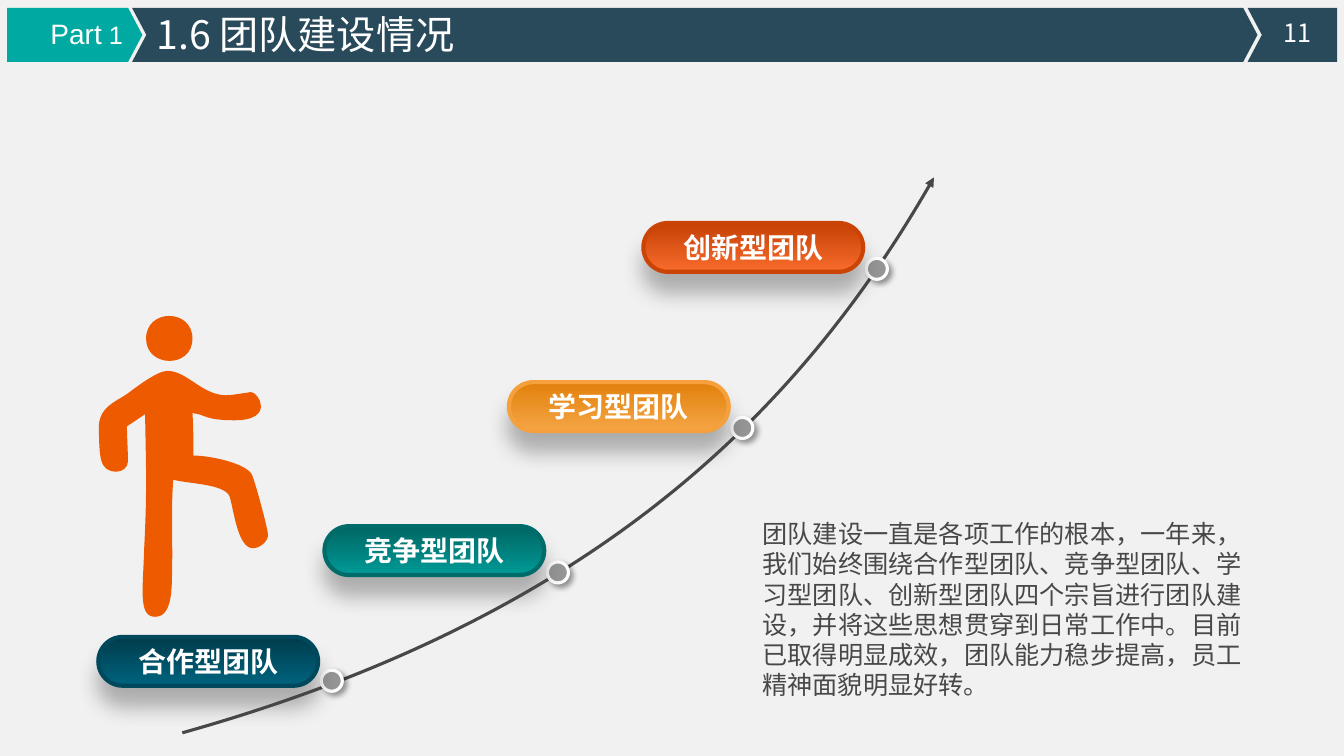
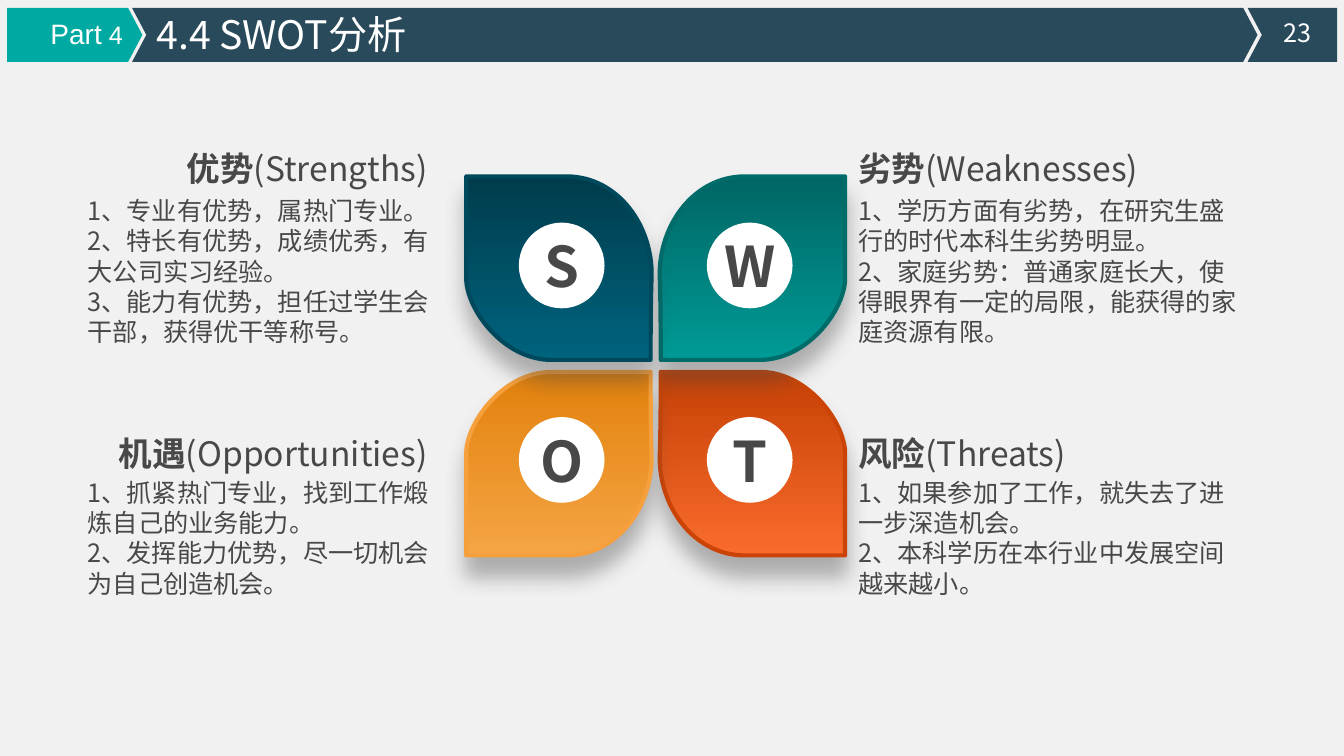
from lxml import etree
from pptx import Presentation
from pptx.dml.color import RGBColor
from pptx.enum.shapes import MSO_SHAPE
from pptx.enum.text import MSO_ANCHOR, MSO_AUTO_SIZE, PP_ALIGN
from pptx.oxml.ns import qn
from pptx.util import Cm, Pt

LEFT, CENTER, RIGHT, JUSTIFY = PP_ALIGN.LEFT, PP_ALIGN.CENTER, PP_ALIGN.RIGHT, PP_ALIGN.JUSTIFY
MIDDLE = MSO_ANCHOR.MIDDLE
OVAL, PILL = MSO_SHAPE.OVAL, MSO_SHAPE.ROUNDED_RECTANGLE

FONT = "Noto Sans CJK SC"
WHITE = RGBColor(0xFF, 0xFF, 0xFF)
PAPER = RGBColor(0xF1, 0xF1, 0xF1)
INK = RGBColor(0x48, 0x48, 0x49)
GRAY = RGBColor(0x96, 0x96, 0x96)
BLACK = RGBColor(0, 0, 0)
TEAL_BAND = RGBColor(0x00, 0xAA, 0xA2)
NAVY_BAND = RGBColor(0x29, 0x4A, 0x5A)
WALKER_ORANGE = RGBColor(0xED, 0x5A, 0x00)
# Each theme colour: gradient top, gradient bottom, border
BLUE = (RGBColor(0x00, 0x3C, 0x4C), RGBColor(0x00, 0x63, 0x7E), RGBColor(0x00, 0x48, 0x5C))
TEAL = (RGBColor(0x00, 0x66, 0x64), RGBColor(0x00, 0x9A, 0x96), RGBColor(0x00, 0x6C, 0x6A))
AMBER = (RGBColor(0xE2, 0x81, 0x0C), RGBColor(0xF5, 0xA5, 0x45), RGBColor(0xF5, 0xA0, 0x3C))
RED = (RGBColor(0xC6, 0x41, 0x06), RGBColor(0xF8, 0x6B, 0x2C), RGBColor(0xCB, 0x44, 0x06))

UNIT = Cm(0.0254)  # grid step of the curved outlines


def write(tf, lines, size, color, align=LEFT, bold=False, font=FONT, wrap=True):
    """Fill a text frame; each line is a list of run texts."""
    tf.word_wrap = wrap
    tf.auto_size = MSO_AUTO_SIZE.NONE
    for i, texts in enumerate(lines):
        p = tf.add_paragraph() if i else tf.paragraphs[0]
        p.alignment = align
        p.line_spacing = Pt(size * 1.2)
        for text in texts:
            r = p.add_run()
            r.text = text
            r.font.name, r.font.size, r.font.bold = font, Pt(size), bold
            r.font.color.rgb = color
            etree.SubElement(r.font._element, qn("a:ea"), typeface=font)


def trace(shapes, x, y, contours, sx=1, sy=1, close=True):
    """Draw contours of cubic curves, given on the UNIT grid, as one shape at x, y."""
    builder = None
    for contour in contours:
        points = [(x + sx * px * UNIT, y + sy * py * UNIT) for px, py in contour]
        if builder:
            builder.move_to(*points[0])
        else:
            builder = shapes.build_freeform(*points[0])
        builder.add_line_segments(points[1:], close=close)
    shape = builder.convert_to_shape()
    shape.shadow.inherit = False
    # Every three segments become one curve: two handles and an end point
    segments = list(shape.element.spPr.iter(qn("a:lnTo")))
    for i in range(0, len(segments), 3):
        curve = etree.Element(qn("a:cubicBezTo"))
        segments[i].addprevious(curve)
        for segment in segments[i:i + 3]:
            curve.append(segment[0])
            segment.getparent().remove(segment)
    return shape


prs = Presentation()
prs.slide_width, prs.slide_height = Cm(33.88), Cm(19.05)

# Layout: background and title place
layout = prs.slide_layouts[5]
layout.background.fill.solid()
layout.background.fill.fore_color.rgb = PAPER
for ph in list(layout.placeholders):
    if ph.placeholder_format.idx:
        ph.element.getparent().remove(ph.element)
    else:
        ph.left, ph.top, ph.width, ph.height = Cm(3.69), Cm(0.13), Cm(14), Cm(1.45)
        ph.text_frame.vertical_anchor = MIDDLE

# Slides with title, part label and page number
slides = []
for title, part, number in [("1.6 团队建设情况", "1", "11"), ("4.4 SWOT分析", "4", "23")]:
    s = prs.slides.add_slide(layout)
    write(s.shapes.title.text_frame, [[title]], 28, WHITE)
    tf = s.shapes.add_textbox(Cm(0.4), Cm(0.3), Cm(2.95), Cm(1.12)).text_frame
    write(tf, [["Part", " " + part]], 20, WHITE, RIGHT, font="Arial")
    tf.paragraphs[0].runs[1].font.size = Pt(18)
    tf = s.shapes.add_textbox(Cm(32.03), Cm(0.31), Cm(1.37), Cm(1.02)).text_frame
    write(tf, [[number]], 18, WHITE, CENTER, wrap=False)
    slides.append(s)
team, swot = slides

# Header bands, moved to the layout so that both slides share them
bands = []
for left, right, notch, tip, color in [(0.18, 3.23, 0, 0.36, TEAL_BAND),
                                       (3.33, 31.34, 0.36, 0.36, NAVY_BAND),
                                       (31.45, 33.71, 0.36, 0, NAVY_BAND)]:
    builder = team.shapes.build_freeform(Cm(left), Cm(0.2))
    builder.add_line_segments([(Cm(px), Cm(py)) for px, py in [
        (right, 0.2), (right + tip, 0.88), (right, 1.56), (left, 1.56), (left + notch, 0.88)]])
    band = builder.convert_to_shape()
    band.shadow.inherit = False
    band.fill.solid()
    band.fill.fore_color.rgb = color
    band.line.fill.background()
    bands.append(band)
for band in bands:
    layout.shapes.element.append(band.element)

raised = []    # shapes with a gradient, a border and a deep shadow
shadowed = []  # shape, shadow colour, blur, distance, direction

# Team: walking figure, body and head
walker = trace(team.shapes, 0, 0, [
    [(98, 425), (99, 453), (98, 468), (116, 468), (121, 468), (127, 464), (127, 458),
     (127, 446), (126, 434), (126, 423), (132, 419), (138, 415), (144, 411),
     (145, 467), (146, 488), (143, 546), (142, 585), (137, 612), (154, 612),
     (174, 612), (170, 574), (171, 553), (171, 528), (170, 500), (172, 476),
     (186, 480), (224, 480), (228, 493), (232, 506), (236, 544), (251, 544),
     (258, 544), (266, 537), (266, 531), (266, 525), (253, 477), (250, 471),
     (245, 460), (209, 452), (192, 452), (192, 438), (192, 424), (191, 410),
     (204, 411), (202, 417), (233, 417), (273, 417), (257, 389), (249, 389),
     (243, 390), (236, 391), (229, 392), (202, 395), (187, 368), (166, 368),
     (156, 368), (134, 385), (126, 391), (114, 399), (98, 404), (98, 425)],
    [(145, 336), (145, 365), (191, 366), (191, 336), (191, 306), (145, 306), (145, 336)]])
walker.fill.solid()
walker.fill.fore_color.rgb = WALKER_ORANGE
walker.line.fill.background()

# Team: growth arrow
arrow = trace(team.shapes, 0, 0, [[(181, 727), (577, 616), (790, 417), (927, 176)]], close=False)
arrow.fill.background()
arrow.line.color.rgb = INK
arrow.line.width = Pt(2.25)
etree.SubElement(arrow.element.spPr.find(qn("a:ln")), qn("a:tailEnd"), type="triangle")

# Team: stages with their dots on the arrow
for name, x, y, dot_y, colors in [("合作型团队", 2.48, 16.05, 16.89, BLUE),
                                  ("竞争型团队", 8.18, 13.26, 14.16, TEAL),
                                  ("学习型团队", 12.83, 9.63, 10.52, AMBER),
                                  ("创新型团队", 16.22, 5.62, 6.51, RED)]:
    dot = team.shapes.add_shape(OVAL, Cm(x + 5.62), Cm(dot_y), Cm(0.53), Cm(0.53))
    dot.fill.solid()
    dot.fill.fore_color.rgb = GRAY
    dot.line.color.rgb = WHITE
    dot.line.width = Pt(2.25)
    shadowed.append((dot, BLACK, 4, 3, 45))
    pill = team.shapes.add_shape(PILL, Cm(x), Cm(y), Cm(5.54), Cm(1.23))
    pill.adjustments[0] = 0.5
    pill.text_frame.vertical_anchor = MIDDLE
    write(pill.text_frame, [[name]], 20, WHITE, CENTER, bold=True, wrap=False)
    raised.append((pill, colors))

# Team: summary
tf = team.shapes.add_textbox(Cm(18.97), Cm(12.94), Cm(12.58), Cm(4.88)).text_frame
write(tf, [["团队建设一直是各项工作的根本，一年来，我们始终围绕合作型团队、竞争型团队、"
            "学习型团队、创新型团队四个宗旨进行团队建设，并将这些思想贯穿到日常工作中。"
            "目前已取得明显成效，团队能力稳步提高，员工精神面貌明显好转。"]], 18, INK, JUSTIFY)

# SWOT: four mirrored petals with their letters
for letter, sx, sy, colors in [("T", 1, 1, RED), ("W", 1, -1, TEAL),
                               ("O", -1, 1, AMBER), ("S", -1, -1, BLUE)]:
    petal = trace(swot.shapes, Cm(16.53), Cm(9.22), [[
        (5, 6), (39, 6), (72, 6), (106, 6), (154, 8), (189, 59), (188, 88),
        (188, 121), (188, 155), (188, 188), (154, 188), (121, 188), (87, 188),
        (37, 187), (3, 139), (4, 89), (5, 61), (5, 34), (5, 6)]], sx, sy)
    raised.append((petal, colors))
    disc = swot.shapes.add_shape(OVAL, Cm(15.45 + sx * 2.37), Cm(8.06 + sy * 2.45),
                                 Cm(2.16), Cm(2.16))
    disc.shadow.inherit = False
    disc.fill.solid()
    disc.fill.fore_color.rgb = WHITE
    disc.line.fill.background()
    disc.text_frame.vertical_anchor = MIDDLE
    write(disc.text_frame, [[letter]], 40, INK, CENTER, bold=True, wrap=False)

# SWOT: headings and points
for name, english, x, y, body_y, width, align, points in [
    ("优势", "(Strengths)", 1.96, 3.61, 4.8, 9.53, RIGHT,
     ["1、专业有优势，属热门专业。", "2、特长有优势，成绩优秀，有大公司实习经验。",
      "3、能力有优势，担任过学生会干部，获得优干等称号。"]),
    ("劣势", "(Weaknesses)", 21.39, 3.61, 4.8, 10.16, LEFT,
     ["1、学历方面有劣势，在研究生盛行的时代本科生劣势明显。",
      "2、家庭劣势：普通家庭长大，使得眼界有一定的局限，能获得的家庭资源有限。"]),
    ("机遇", "(Opportunities)", 1.96, 10.79, 11.9, 9.53, RIGHT,
     ["1、抓紧热门专业，找到工作煅炼自己的业务能力。",
      "2、发挥能力优势，尽一切机会为自己创造机会。"]),
    ("风险", "(Threats)", 21.39, 10.79, 11.9, 10.16, LEFT,
     ["1、如果参加了工作，就失去了进一步深造机会。",
      "2、本科学历在本行业中发展空间越来越小。"]),
]:
    tf = swot.shapes.add_textbox(Cm(x), Cm(y), Cm(9.07), Cm(1.27)).text_frame
    write(tf, [[name, english]], 24, INK, align, bold=True)
    tf.paragraphs[0].runs[1].font.bold = False
    tf = swot.shapes.add_textbox(Cm(x), Cm(body_y), Cm(width), Cm(4.1)).text_frame
    write(tf, [[point] for point in points], 18, INK)

# Gradients and borders
for sp, (top, bottom, border) in raised:
    sp.fill.gradient()
    sp.fill.gradient_angle = 270
    for stop, color in zip(sp.fill.gradient_stops, (top, bottom)):
        stop.color.rgb = color
    sp.line.color.rgb = border
    sp.line.width = Pt(3)
    shadowed.append((sp, INK, 15, 14, 90))

# Shadows at 40 % opacity
for sp, color, blur, distance, angle in shadowed:
    sp.shadow.inherit = False
    effects = sp.element.spPr.find(qn("a:effectLst"))
    shadow = etree.SubElement(effects, qn("a:outerShdw"), blurRad=str(Pt(blur)),
                              dist=str(Pt(distance)), dir=str(angle * 60000), rotWithShape="0")
    clr = etree.SubElement(shadow, qn("a:srgbClr"), val=str(color))
    etree.SubElement(clr, qn("a:alpha"), val="40000")

prs.save("out.pptx")
